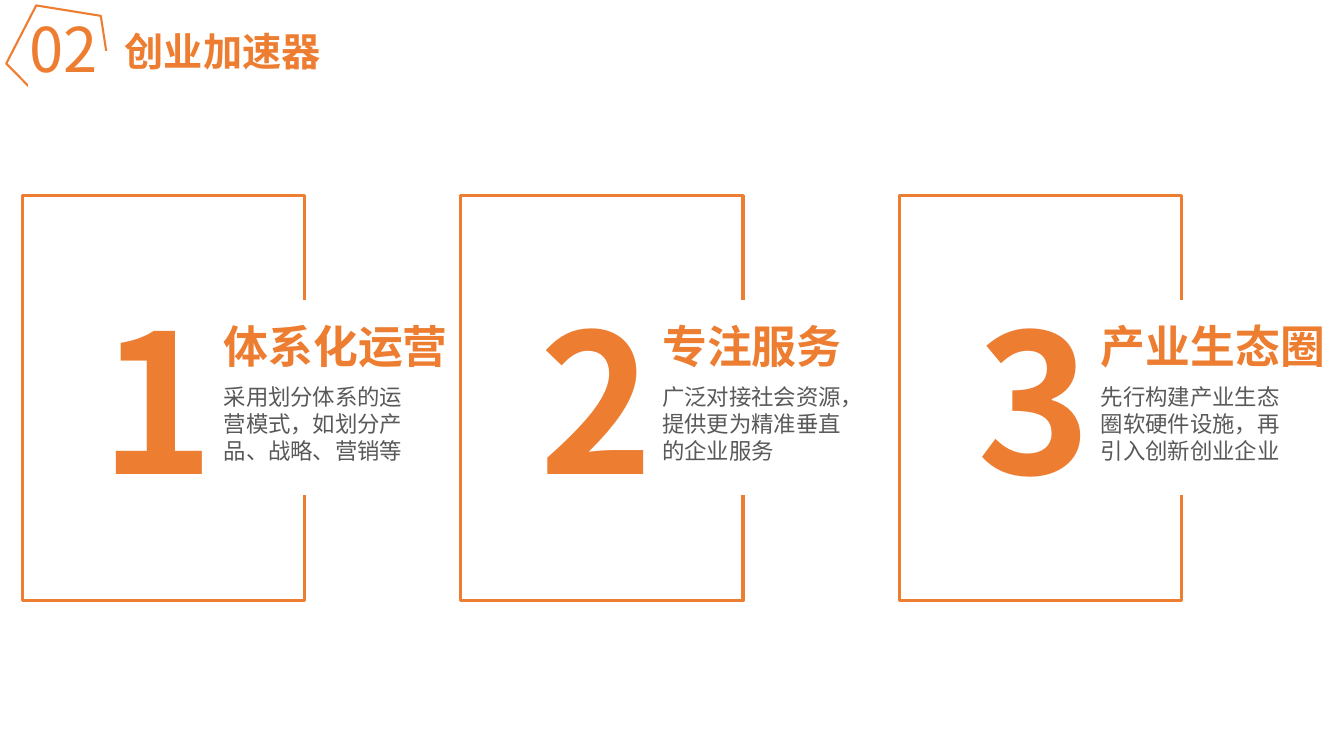
from pptx import Presentation
from pptx.dml.color import RGBColor
from pptx.enum.shapes import MSO_SHAPE as SHAPE
from pptx.enum.text import MSO_AUTO_SIZE as AUTO, PP_ALIGN as ALIGN
from pptx.util import Pt
from lxml import etree

PX = 9144  # 100 px to the inch
FONT = "Noto Sans CJK SC"
ORANGE = RGBColor(0xED, 0x7D, 0x31)
GRAY = RGBColor(0x59, 0x59, 0x59)
WHITE = RGBColor(0xFF, 0xFF, 0xFF)

prs = Presentation()
prs.slide_width, prs.slide_height = 1333 * PX, 750 * PX
slide = prs.slides.add_slide(prs.slide_layouts[6])


def add_outline(kind, box, line, width, fill=WHITE):
    sp = slide.shapes.add_shape(kind, *(v * PX for v in box))
    sp.shadow.inherit = False
    if fill is None:
        sp.fill.background()
    else:
        sp.fill.solid()
        sp.fill.fore_color.rgb = fill
    sp.line.color.rgb = line
    sp.line.width = Pt(width)
    return sp


def add_text(text, box, size, color=ORANGE, bold=False, align=ALIGN.LEFT):
    tf = slide.shapes.add_textbox(*(v * PX for v in box)).text_frame
    tf.word_wrap = True
    tf.auto_size = AUTO.SHAPE_TO_FIT_TEXT
    p = tf.paragraphs[0]
    p.text = text
    p.alignment = align
    font = p.runs[0].font
    font.name, font.size, font.bold = FONT, Pt(size), bold
    font.color.rgb = color
    # East Asian characters take their typeface from a:ea
    latin = font._element.find("{*}latin")
    ea = etree.Element(latin.tag.replace("latin", "ea"), typeface=FONT)
    latin.addnext(ea)


# Header: the white mask opens the pentagon at its lower right
pentagon = add_outline(SHAPE.REGULAR_PENTAGON, (12, 1, 105, 100), ORANGE, 1.5, None)
pentagon.rotation = 45.2
add_outline(SHAPE.RECTANGLE, (28, 51, 211, 67), WHITE, 1)
add_text("02", (10, 6, 106, 84), 44, align=ALIGN.CENTER)
add_text("创业加速器", (114, 22, 340, 57), 28, bold=True)

# Cards: heading, description, left edge of the mask that opens the frame
CARD_LEFT, CARD_PITCH = 22, 435
cards = [
    ("体系化运营", "采用划分体系的运营模式，如划分产品、战略、营销等", 219),
    ("专注服务", "广泛对接社会资源，提供更为精准垂直的企业服务", 654),
    ("产业生态圈", "先行构建产业生态圈软硬件设施，再引入创新创业企业", 1057),
]
for i, (heading, description, mask_left) in enumerate(cards):
    left = CARD_LEFT + i * CARD_PITCH
    add_outline(SHAPE.RECTANGLE, (left, 194, 280, 402), ORANGE, 2.25)
    add_outline(SHAPE.RECTANGLE, (mask_left, 299, 263, 191), WHITE, 2.25)
    add_text(heading, (left + 190, 311, 253, 64), 32, bold=True)
    add_text(str(i + 1), (left + 68, 274, 144, 242), 138, bold=True)
    add_text(description, (left + 190, 375, 219, 91), 16, GRAY)

prs.save("out.pptx")
